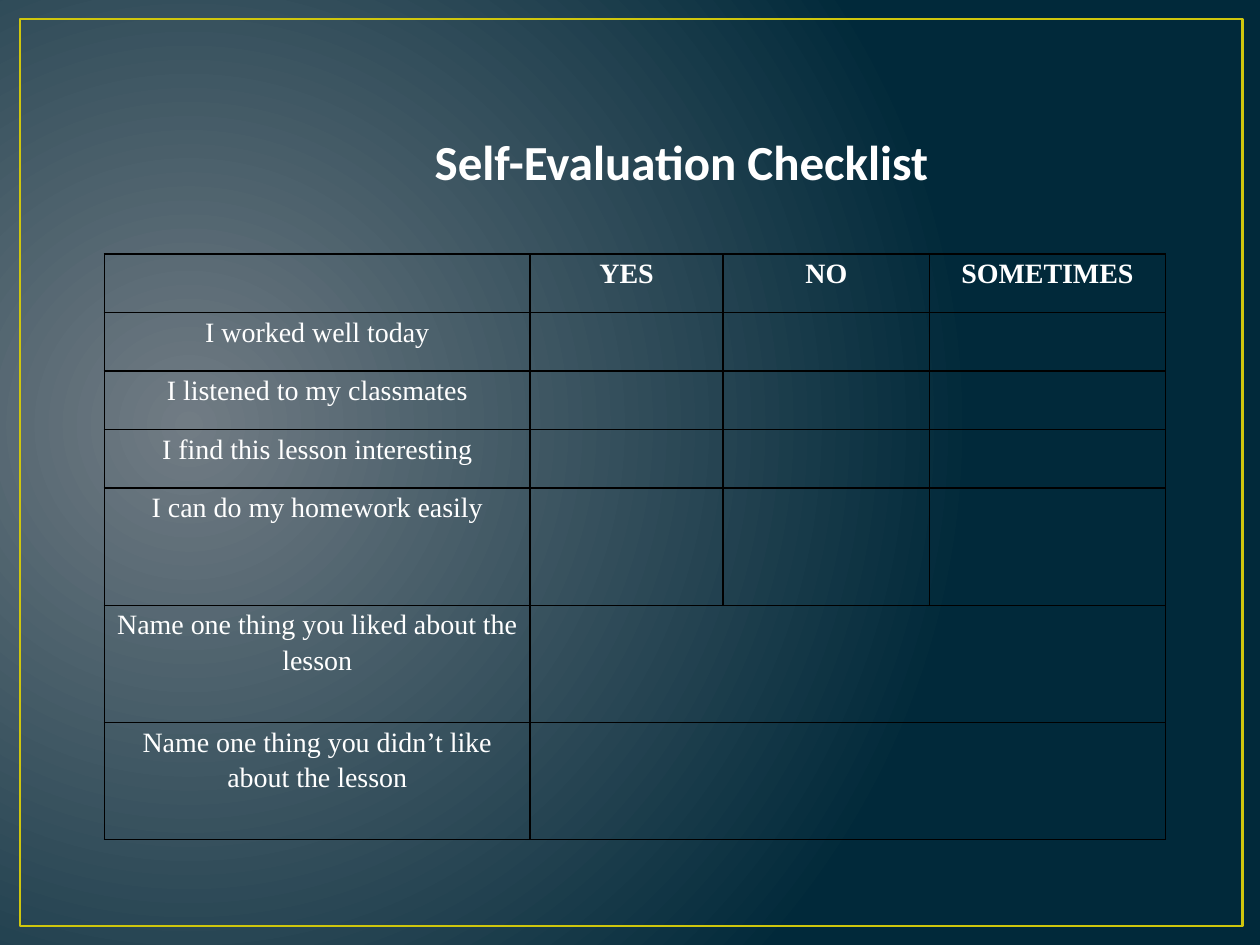
from lxml import etree
from pptx import Presentation
from pptx.dml.color import RGBColor
from pptx.enum import shapes, text
from pptx.oxml import parse_xml
from pptx.oxml.ns import nsdecls, qn
from pptx.util import Pt

# Content
TITLE = "Self-Evaluation Checklist"
ANSWERS = ["YES", "NO", "SOMETIMES"]
STATEMENTS = [
    "I worked well today",
    "I listened to my classmates",
    "I find this lesson interesting",
    "I can do my homework easily",
]
OPEN_QUESTIONS = [
    "Name one thing you liked about the lesson",
    "Name one thing you didn’t like about the lesson",
]

THEME = {
    "glow": RGBColor(0x71, 0x7C, 0x84),
    "navy": RGBColor(0x01, 0x29, 0x3A),
    "frame": RGBColor(0xCF, 0xC6, 0x0D),
    "text": RGBColor(0xFF, 0xFF, 0xFF),
    "border": "000000",
    "title_font": "Calibri",
    "title_size": Pt(28),
    "table_font": "Times New Roman",
    "table_size": Pt(16),
}

# Layout in points
SLIDE_SIZE = (720, 540)
FRAME_BOX = (11.5, 10.8, 698.4, 518.4)
TITLE_BOX = (241.2, 71.3, 303.8, 41)
TABLE_ORIGIN = (59.6, 145.2)
COLUMN_WIDTHS = [243.4, 110.2, 118.1, 134.6]
ROW_HEIGHT = 33.45
TALL_ROWS = 3


def set_background(slide):
    fill = slide.background.fill
    fill.gradient()
    for stop, position, color in zip(fill.gradient_stops, (0, 1), ("glow", "navy")):
        stop.position = position
        stop.color.rgb = THEME[color]
    linear = next(slide.element.iter(qn("a:lin")))
    linear.getparent().replace(linear, parse_xml(
        f'<a:path {nsdecls("a")} path="circle">'
        '<a:fillToRect l="15000" t="50000" r="85000" b="60000"/></a:path>'))


def format_text(paragraph, font_name, size, bold):
    for run in paragraph.runs:
        run.font.name = font_name
        run.font.size = size
        run.font.bold = bold
        run.font.color.rgb = THEME["text"]


def set_borders(cell):
    properties = cell._tc.get_or_add_tcPr()
    for index, side in enumerate(("lnL", "lnR", "lnT", "lnB")):
        line = parse_xml(f'<a:{side} {nsdecls("a")} w="{Pt(1)}"/>')
        solid = etree.SubElement(line, qn("a:solidFill"))
        etree.SubElement(solid, qn("a:srgbClr"), val=THEME["border"])
        properties.insert(index, line)


def write_cell(cell, content, bold):
    cell.margin_left = cell.margin_right = Pt(5)
    cell.margin_top = cell.margin_bottom = 0
    cell.text_frame.text = content
    paragraph = cell.text_frame.paragraphs[0]
    paragraph.alignment = text.PP_ALIGN.CENTER
    paragraph.line_spacing = 1.15
    format_text(paragraph, THEME["table_font"], THEME["table_size"], bold)


def add_frame(slide):
    frame = slide.shapes.add_shape(
        shapes.MSO_SHAPE.RECTANGLE, *(Pt(value) for value in FRAME_BOX))
    frame.shadow.inherit = False
    frame.fill.background()
    frame.line.color.rgb = THEME["frame"]
    frame.line.width = Pt(1.5)


def add_checklist(slide):
    labels = [""] + STATEMENTS + OPEN_QUESTIONS
    heights = [ROW_HEIGHT * (2 if row >= len(labels) - TALL_ROWS else 1)
               for row in range(len(labels))]
    table = slide.shapes.add_table(
        len(labels), len(COLUMN_WIDTHS), *(Pt(value) for value in TABLE_ORIGIN),
        Pt(sum(COLUMN_WIDTHS)), Pt(sum(heights))).table
    table.first_row = table.horz_banding = False
    for column, width in zip(table.columns, COLUMN_WIDTHS):
        column.width = Pt(width)
    for row, height in zip(table.rows, heights):
        row.height = Pt(height)
    for cell in table.iter_cells():
        cell.fill.background()
        set_borders(cell)

    # Headings, row labels and wide answer cells
    for column, answer in enumerate(ANSWERS, start=1):
        write_cell(table.cell(0, column), answer, True)
    for row, label in enumerate(labels):
        if label:
            write_cell(table.cell(row, 0), label, False)
        if label in OPEN_QUESTIONS:
            table.cell(row, 1).merge(table.cell(row, len(ANSWERS)))


def add_title(slide):
    title = slide.shapes.title
    title.left, title.top, title.width, title.height = (Pt(value) for value in TITLE_BOX)
    frame = title.text_frame
    frame.text = TITLE
    frame.word_wrap = False
    frame.auto_size = text.MSO_AUTO_SIZE.SHAPE_TO_FIT_TEXT
    frame.vertical_anchor = text.MSO_ANCHOR.TOP
    paragraph = frame.paragraphs[0]
    paragraph.alignment = text.PP_ALIGN.LEFT
    format_text(paragraph, THEME["title_font"], THEME["title_size"], True)


def main():
    presentation = Presentation()
    presentation.slide_width, presentation.slide_height = (Pt(v) for v in SLIDE_SIZE)
    slide = presentation.slides.add_slide(presentation.slide_layouts[5])
    set_background(slide)
    add_frame(slide)
    add_checklist(slide)
    add_title(slide)
    presentation.save("out.pptx")


if __name__ == "__main__":
    main()
